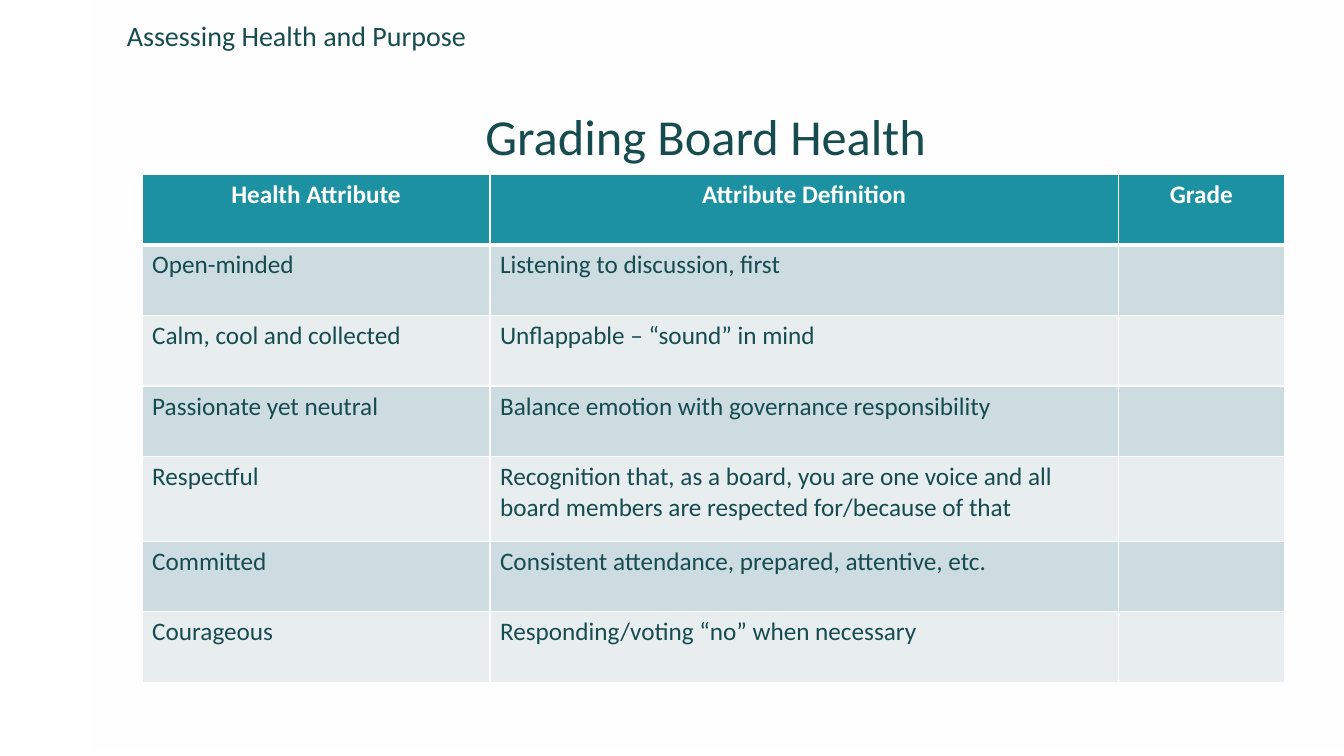
from lxml import etree
from pptx import Presentation
from pptx.dml.color import RGBColor
from pptx.enum.shapes import MSO_SHAPE
from pptx.enum.text import MSO_ANCHOR, PP_ALIGN
from pptx.oxml.ns import qn
from pptx.util import Inches, Pt

RECTANGLE = MSO_SHAPE.RECTANGLE
TOP, BOTTOM = MSO_ANCHOR.TOP, MSO_ANCHOR.BOTTOM
LEFT, CENTER = PP_ALIGN.LEFT, PP_ALIGN.CENTER

WHITE = RGBColor(0xFF, 0xFF, 0xFF)
DARK_TEAL = RGBColor(0x16, 0x4B, 0x4F)
HEADER_TEAL = RGBColor(0x1B, 0x91, 0xA1)
BANDS = (RGBColor(0xCD, 0xDC, 0xE0), RGBColor(0xE8, 0xEE, 0xF0))
FONT = "Calibri"

COLUMN_WIDTHS = (3.45, 6.23, 1.65)
ROW_HEIGHT, TALL_ROW_HEIGHT = 0.7, 0.84
TALL_ATTRIBUTE = "Respectful"
HEADINGS = ("Health Attribute", "Attribute Definition", "Grade")
ATTRIBUTES = (
    ("Open-minded", "Listening to discussion, first", ""),
    ("Calm, cool and collected", "Unflappable – “sound” in mind", ""),
    ("Passionate yet neutral", "Balance emotion with governance responsibility", ""),
    ("Respectful", "Recognition that, as a board, you are one voice and all "
                   "board members are respected for/because of that", ""),
    ("Committed", "Consistent attendance, prepared, attentive, etc.", ""),
    ("Courageous", "Responding/voting “no” when necessary", ""),
)


def write(tf, text, size=18, color=DARK_TEAL, bold=False, align=LEFT, spacing=None):
    p = tf.paragraphs[0]
    p.alignment = align
    if spacing:
        p.line_spacing = spacing
    p.font.size = Pt(size)
    if text:
        r = p.add_run()
        r.text = text
        r.font.name = FONT
        r.font.size = Pt(size)
        r.font.bold = bold
        r.font.color.rgb = color


def add_text(slide, box, text, anchor=TOP, **fmt):
    tf = slide.shapes.add_textbox(*map(Inches, box)).text_frame
    tf.word_wrap = True
    tf.vertical_anchor = anchor
    write(tf, text, spacing=0.9, **fmt)


def add_panel(slide, box):
    """Add the white panel that fades out along its height."""
    sp = slide.shapes.add_shape(RECTANGLE, *map(Inches, box))
    sp.shadow.inherit = False
    sp.line.fill.background()
    sp.fill.gradient()
    sp.fill.gradient_angle = 270
    for stop, alpha in zip(sp.fill.gradient_stops, (60, 0)):
        stop.color.rgb = WHITE
    for clr, alpha in zip(sp._element.spPr.iter(qn("a:srgbClr")), (60, 0)):
        etree.SubElement(clr, qn("a:alpha"), val=str(alpha * 1000))


def set_borders(cell, bottom):
    tc_pr = cell._tc.get_or_add_tcPr()
    for side, width in (("L", 1), ("R", 1), ("T", 1), ("B", bottom)):
        ln = etree.SubElement(tc_pr, qn(f"a:ln{side}"), w=str(Pt(width)))
        fill = etree.SubElement(ln, qn("a:solidFill"))
        etree.SubElement(fill, qn("a:srgbClr"), val=str(WHITE))


def add_grading_table(slide, left, top):
    rows = (HEADINGS,) + ATTRIBUTES
    heights = [TALL_ROW_HEIGHT if row[0] == TALL_ATTRIBUTE else ROW_HEIGHT
               for row in rows]
    table = slide.shapes.add_table(
        len(rows), len(HEADINGS), Inches(left), Inches(top),
        Inches(sum(COLUMN_WIDTHS)), Inches(sum(heights))).table
    for column, width in zip(table.columns, COLUMN_WIDTHS):
        column.width = Inches(width)
    for i, (row, height) in enumerate(zip(rows, heights)):
        table.rows[i].height = Inches(height)
        heading = i == 0
        for j, text in enumerate(row):
            cell = table.cell(i, j)
            # The line under the headings is shared with the first body row.
            set_borders(cell, bottom=3 if heading else 1)
            if i == 1:
                cell._tc.tcPr.find(qn("a:lnT")).set("w", str(Pt(3)))
            cell.fill.solid()
            cell.fill.fore_color.rgb = HEADER_TEAL if heading else BANDS[(i - 1) % 2]
            write(cell.text_frame, text, bold=heading,
                  color=WHITE if heading else DARK_TEAL,
                  align=CENTER if heading else LEFT)


def build_grading_slide(prs):
    slide = prs.slides.add_slide(prs.slide_layouts[6])
    add_panel(slide, (0.91, 0, 12.41, 7.5))
    add_text(slide, (1.16, 0.17, 11.83, 0.4), "Assessing Health and Purpose", size=20)
    add_text(slide, (1.25, 0.19, 11.5, 1.51), "Grading Board Health",
             anchor=BOTTOM, size=36, align=CENTER)
    add_grading_table(slide, 1.41, 1.73)


def main():
    prs = Presentation()
    prs.slide_width, prs.slide_height = Inches(13.33), Inches(7.5)
    build_grading_slide(prs)
    prs.save("out.pptx")


if __name__ == "__main__":
    main()
